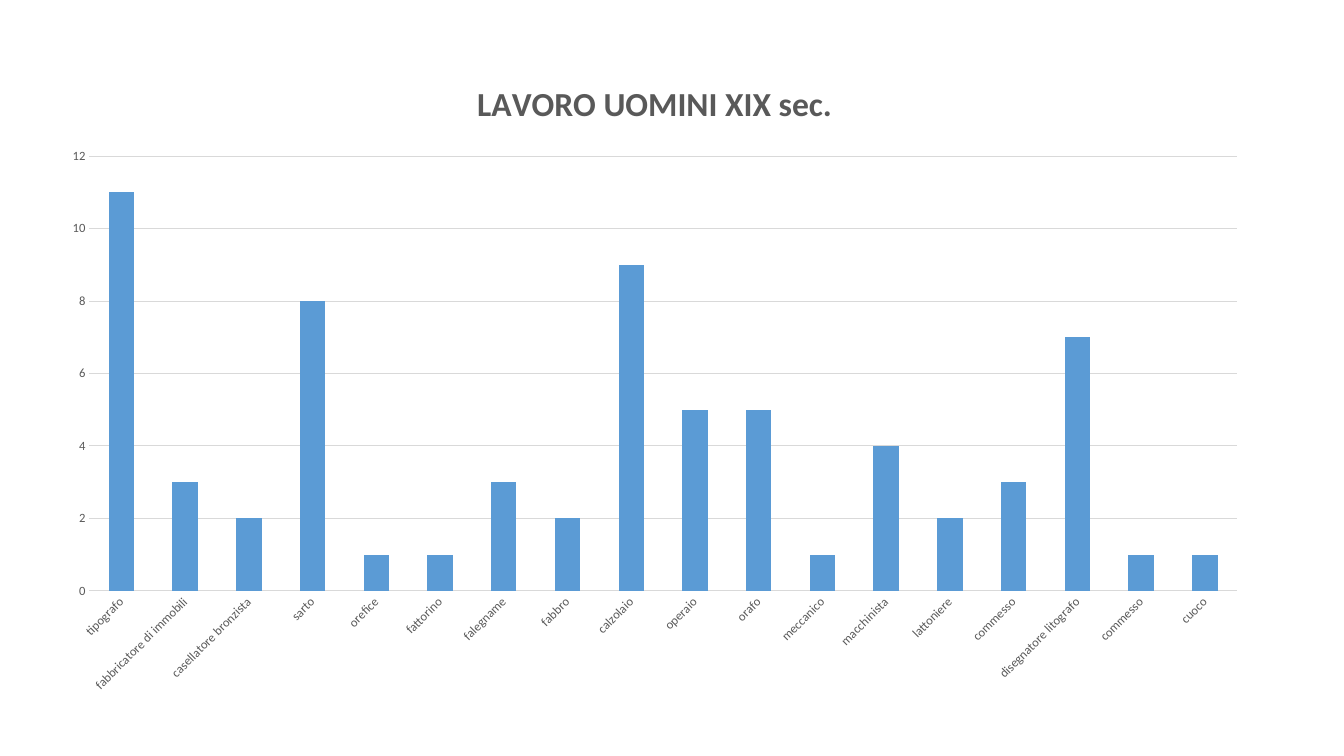
"""Build a slide with a column chart of men's jobs in the 19th century."""
from dataclasses import dataclass

from pptx import Presentation
from pptx.chart.chart import Chart
from pptx.chart.data import CategoryChartData
from pptx.dml.color import RGBColor
from pptx.enum.chart import XL_CHART_TYPE as ChartType, XL_TICK_MARK as TickMark
from pptx.oxml.ns import qn
from pptx.text.text import Font
from pptx.util import Cm, Pt


@dataclass(frozen=True)
class Theme:
    font: str = "Calibri"
    text: RGBColor = RGBColor(0x59, 0x59, 0x59)
    grid: RGBColor = RGBColor(0xD9, 0xD9, 0xD9)
    column: RGBColor = RGBColor(0x5B, 0x9B, 0xD5)
    title_size: Pt = Pt(24)
    label_size: Pt = Pt(9)
    chart_size: Pt = Pt(10)
    grid_width: Pt = Pt(0.75)


@dataclass(frozen=True)
class Job:
    name: str
    workers: int


THEME = Theme()
JOBS = [
    Job("tipografo", 11),
    Job("fabbricatore di immobili", 3),
    Job("casellatore bronzista", 2),
    Job("sarto", 8),
    Job("orefice", 1),
    Job("fattorino", 1),
    Job("falegname", 3),
    Job("fabbro", 2),
    Job("calzolaio", 9),
    Job("operaio", 5),
    Job("orafo", 5),
    Job("meccanico", 1),
    Job("macchinista", 4),
    Job("lattoniere", 2),
    Job("commesso", 3),
    Job("disegnatore litografo", 7),
    Job("commesso", 1),
    Job("cuoco", 1),
]


def style_font(font: Font, size: Pt, bold: bool = False) -> None:
    font.name = THEME.font
    font.size = size
    font.bold = bold
    font.color.rgb = THEME.text


def style_title(chart: Chart, wording: str) -> None:
    chart.has_title = True
    heading = chart.chart_title.text_frame.paragraphs[0].add_run()
    heading.text = wording
    style_font(heading.font, THEME.title_size, bold=True)


def style_axes(chart: Chart) -> None:
    jobs_axis, workers_axis = chart.category_axis, chart.value_axis
    for axis in (jobs_axis, workers_axis):
        axis.major_tick_mark = axis.minor_tick_mark = TickMark.NONE
        axis.format.line.fill.background()
        style_font(axis.tick_labels.font, THEME.label_size)
    slant = jobs_axis._element.find(qn("c:txPr")).find(qn("a:bodyPr"))
    slant.set("rot", str(-45 * 60000))
    slant.set("vert", "horz")
    workers_axis.minimum_scale, workers_axis.maximum_scale = 0, 12
    workers_axis.major_unit = 2
    workers_axis.has_major_gridlines = True
    grid_line = workers_axis.major_gridlines.format.line
    grid_line.color.rgb = THEME.grid
    grid_line.width = THEME.grid_width


def style_columns(chart: Chart) -> None:
    plot = chart.plots[0]
    plot.gap_width = 150
    plot.vary_by_categories = False
    columns = plot.series[0]
    columns.invert_if_negative = False
    columns.format.fill.solid()
    columns.format.fill.fore_color.rgb = THEME.column


def main() -> None:
    deck = Presentation()
    deck.slide_width, deck.slide_height = Cm(33.87), Cm(19.05)
    slide = deck.slides.add_slide(deck.slide_layouts.get_by_name("Blank"))

    job_counts = CategoryChartData()
    job_counts.categories = [job.name for job in JOBS]
    job_counts.add_series("Series 1", [job.workers for job in JOBS])
    chart = slide.shapes.add_chart(
        ChartType.COLUMN_CLUSTERED, Cm(1.22), Cm(1.42), Cm(30.56), Cm(16.36), job_counts
    ).chart
    chart.has_legend = False
    style_font(chart.font, THEME.chart_size)
    style_title(chart, "LAVORO UOMINI XIX sec.")
    style_axes(chart)
    style_columns(chart)
    deck.save("out.pptx")


if __name__ == "__main__":
    main()
